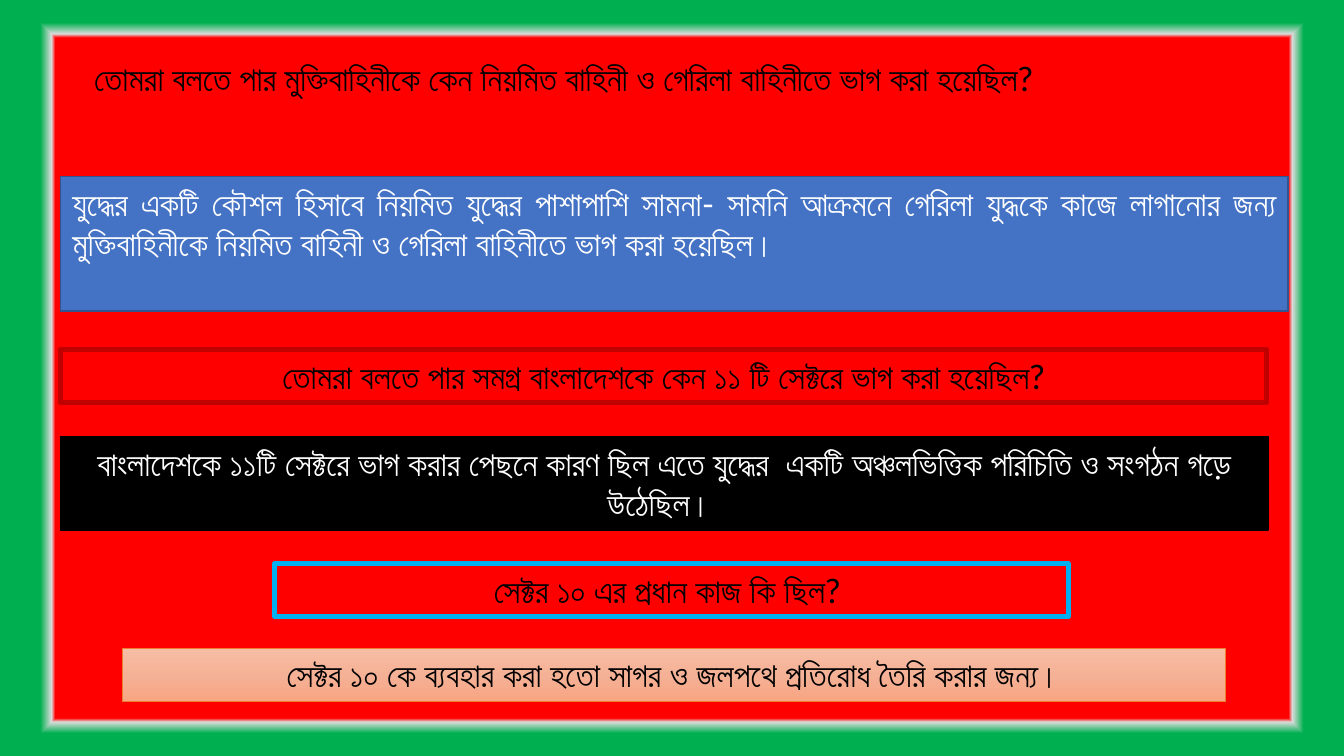
from lxml import etree
from pptx import Presentation
from pptx.dml.color import RGBColor
from pptx.enum.shapes import MSO_SHAPE
from pptx.enum.text import MSO_ANCHOR, PP_ALIGN
from pptx.oxml.ns import qn
from pptx.util import Inches, Pt

RECTANGLE = MSO_SHAPE.RECTANGLE
TOP = MSO_ANCHOR.TOP
CENTER, JUSTIFY = PP_ALIGN.CENTER, PP_ALIGN.JUSTIFY

FONT = "Lato"
BLACK, WHITE, RED, GREEN = "000000", "FFFFFF", "FF0000", "00B050"
FRAME_STOPS = [(0, RED), (9, RED), (90, RED), (91, "DBDBDB"), (94, GREEN), (100, GREEN)]
PEACH_STOPS = [(0, "F7BDA5"), (50, "F5B196"), (100, "F8A582")]

# box (left, top, width, height), fill, line colour, line width, text colour, alignment, text
PANELS = [
    ((0.68, 0.43, 9.78, 0.77), None, RED, 3, BLACK, JUSTIFY,
     "তোমরা বলতে পার মুক্তিবাহিনীকে কেন নিয়মিত বাহিনী ও গেরিলা বাহিনীতে ভাগ করা হয়েছিল? "),
    ((0.5, 1.46, 10.15, 1.11), "4472C4", "325491", 1, WHITE, JUSTIFY,
     "যুদ্ধের একটি কৌশল হিসাবে নিয়মিত যুদ্ধের পাশাপাশি সামনা- সামনি আক্রমনে গেরিলা যুদ্ধকে "
     "কাজে লাগানোর জন্য মুক্তিবাহিনীকে নিয়মিত বাহিনী ও গেরিলা বাহিনীতে ভাগ করা হয়েছিল। "),
    ((0.5, 2.89, 9.97, 0.44), None, "C00000", 3, BLACK, CENTER,
     "তোমরা বলতে পার সমগ্র বাংলাদেশকে কেন ১১ টি সেক্টরে ভাগ করা হয়েছিল?"),
    ((0.5, 3.61, 9.98, 0.77), BLACK, BLACK, 1, WHITE, CENTER,
     "বাংলাদেশকে ১১টি সেক্টরে ভাগ করার পেছনে কারণ ছিল এতে যুদ্ধের  একটি অঞ্চলভিত্তিক "
     "পরিচিতি ও সংগঠন গড়ে উঠেছিল। "),
    ((2.27, 4.66, 6.56, 0.44), None, "00B0F0", 3, BLACK, CENTER,
     "সেক্টর ১০ এর প্রধান কাজ কি ছিল? "),
    ((1.01, 5.36, 9.12, 0.44), PEACH_STOPS, "ED7D31", 0.5, BLACK, CENTER,
     "সেক্টর ১০ কে ব্যবহার করা হতো সাগর ও জলপথে প্রতিরোধ তৈরি করার জন্য।"),
]


def color(hex_string):
    return RGBColor.from_string(hex_string)


def set_gradient(fill, parent, stops, rectangular=False):
    """Fill with the (percent, colour) stops, downwards or from the centre out."""
    fill.gradient()
    gradient = parent.find(qn("a:gradFill"))
    for child in list(gradient):
        gradient.remove(child)
    stop_list = etree.SubElement(gradient, qn("a:gsLst"))
    for percent, hex_string in stops:
        stop = etree.SubElement(stop_list, qn("a:gs"), pos=str(percent * 1000))
        etree.SubElement(stop, qn("a:srgbClr"), val=hex_string)
    if rectangular:
        shading = etree.SubElement(gradient, qn("a:path"), path="rect")
        middle = dict.fromkeys("ltrb", "50000")
        etree.SubElement(shading, qn("a:fillToRect"), middle)
    else:
        etree.SubElement(gradient, qn("a:lin"), ang="5400000", scaled="0")


def paint_background(slide):
    fill = slide.background.fill
    properties = slide.element.find(".//" + qn("p:bgPr"))
    set_gradient(fill, properties, FRAME_STOPS, rectangular=True)


def set_font(font, hex_string):
    font.size = Pt(20)
    font.name = FONT
    font.color.rgb = color(hex_string)
    # Bengali takes its typeface from the complex-script entry.
    latin = font._element.find(qn("a:latin"))
    complex_script = etree.Element(qn("a:cs"), typeface=FONT)
    latin.addnext(complex_script)


def add_panel(slide, box, fill, line_color, line_width, text_color, alignment, text):
    panel = slide.shapes.add_shape(RECTANGLE, *map(Inches, box))
    panel.shadow.inherit = False
    if fill is None:
        panel.fill.background()
    elif isinstance(fill, list):
        set_gradient(panel.fill, panel.element.spPr, fill)
    else:
        panel.fill.solid()
        panel.fill.fore_color.rgb = color(fill)
    panel.line.color.rgb = color(line_color)
    panel.line.width = Pt(line_width)
    frame = panel.text_frame
    frame.word_wrap = True
    frame.vertical_anchor = TOP
    para = frame.paragraphs[0]
    para.text = text
    para.alignment = alignment
    set_font(para.font, text_color)


def main():
    deck = Presentation()
    deck.slide_width, deck.slide_height = Inches(11.11), Inches(6.25)
    slide = deck.slides.add_slide(deck.slide_layouts[6])
    paint_background(slide)
    for panel in PANELS:
        add_panel(slide, *panel)
    deck.save("out.pptx")


if __name__ == "__main__":
    main()
